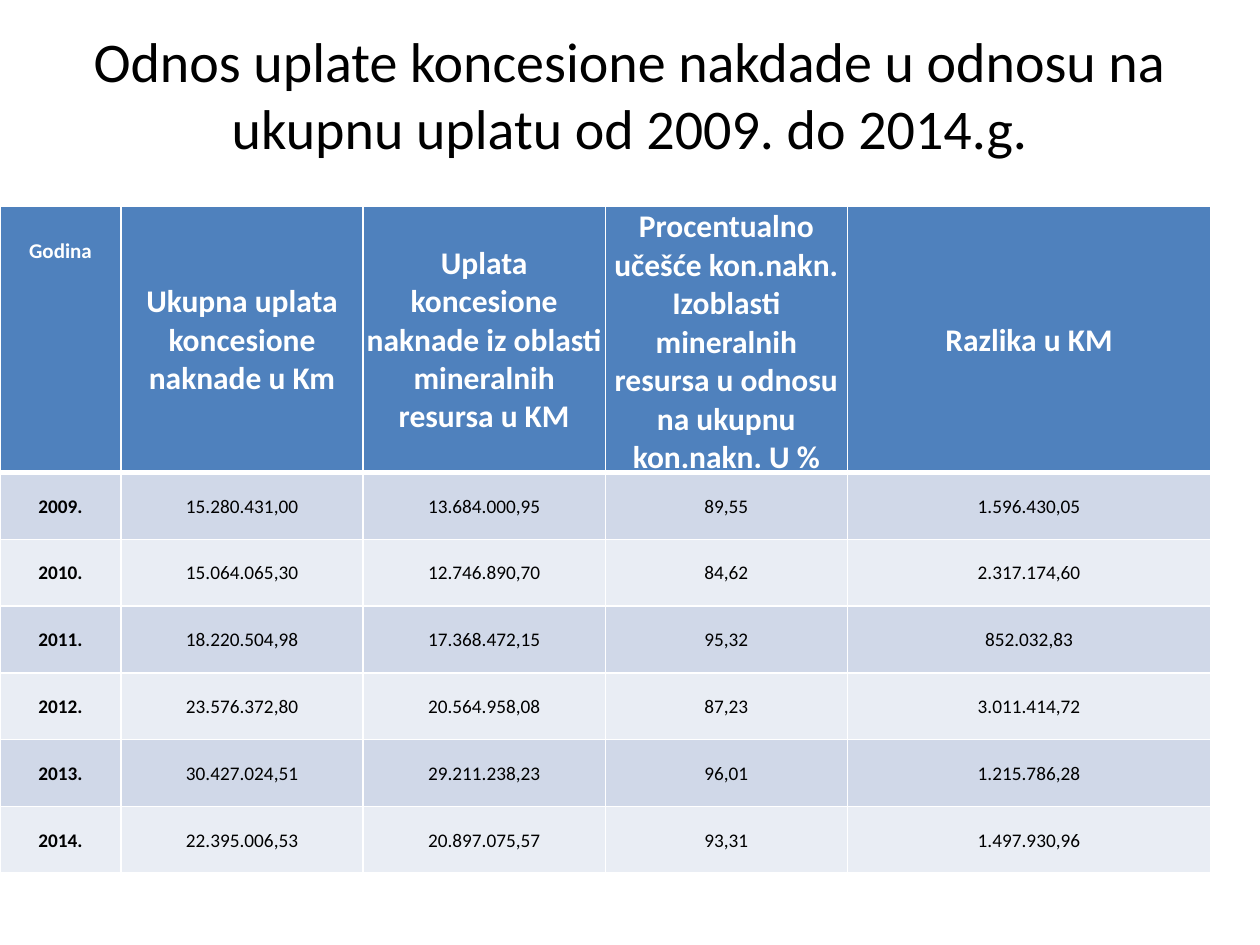
from lxml.etree import SubElement
from pptx import Presentation
from pptx.dml.color import RGBColor
from pptx.enum.text import MSO_ANCHOR, PP_ALIGN
from pptx.oxml.ns import qn
from pptx.util import Inches, Pt

WIDTH, HEIGHT = 10, 7.5
FONT = "Calibri"
WHITE, BLACK, BLUE = "FFFFFF", "000000", "4F81BD"
BANDS = ["D0D8E8", "E9EDF4"]

# Table grid: column shares, row heights in inches
TABLE_LEFT, TABLE_TOP, TABLE_WIDTH = 0, 1.64, 9.61
COLUMN_SHARES = [1, 2, 2, 2, 3]
HEADER_HEIGHT, ROW_HEIGHT = 2.08, 0.53

TITLE = ("Odnos uplate koncesione nakdade u odnosu na "
         "ukupnu uplatu od 2009. do 2014.g.")
HEADERS = [
    "Godina",
    "Ukupna uplata koncesione naknade u Km",
    "Uplata koncesione naknade iz oblasti mineralnih resursa u KM",
    "Procentualno učešće kon.nakn. Izoblasti mineralnih resursa "
    "u odnosu na ukupnu kon.nakn. U %",
    "Razlika u KM",
]
YEARS = [
    ["2009.", "15.280.431,00", "13.684.000,95", "89,55", "1.596.430,05"],
    ["2010.", "15.064.065,30", "12.746.890,70", "84,62", "2.317.174,60"],
    ["2011.", "18.220.504,98", "17.368.472,15", "95,32", "852.032,83"],
    ["2012.", "23.576.372,80", "20.564.958,08", "87,23", "3.011.414,72"],
    ["2013.", "30.427.024,51", "29.211.238,23", "96,01", "1.215.786,28"],
    ["2014.", "22.395.006,53", "20.897.075,57", "93,31", "1.497.930,96"],
]

# Cell formats; margins are left, top, right, bottom in inches
TIGHT = [0.01, 0.01, 0.01, 0]
HEADER_FORMAT = {"size": Pt(18), "bold": True}
CORNER_FORMAT = {"size": Pt(12), "bold": True}
CORNER_MARGINS = [0.1, 0.25, 0.1, 0.05]


def color(hex_value):
    return RGBColor.from_string(hex_value)


def set_attributes(target, values):
    for name, value in values.items():
        setattr(target, name, value)


def write_text(frame, text, text_color, font_format):
    para = frame.paragraphs[0]
    para.alignment = PP_ALIGN.CENTER
    span = para.add_run()
    span.text = text
    set_attributes(span.font, {"name": FONT, **font_format})
    span.font.color.rgb = color(text_color)


def add_title(page):
    box = page.shapes.add_textbox(
        Inches(0.05 * WIDTH), 0, Inches(0.9 * WIDTH), Inches(1.48))
    set_attributes(box.text_frame, {
        "word_wrap": True, "vertical_anchor": MSO_ANCHOR.MIDDLE})
    write_text(box.text_frame, TITLE, BLACK, {"size": Pt(32)})


def set_borders(cell, bottom_width):
    properties = cell._tc.get_or_add_tcPr()
    widths = {"a:lnL": 1, "a:lnR": 1, "a:lnT": 1, "a:lnB": bottom_width}
    for tag, width in widths.items():
        line = SubElement(properties, qn(tag), w=str(Pt(width)))
        fill = SubElement(line, qn("a:solidFill"))
        SubElement(fill, qn("a:srgbClr"), val=WHITE)


def style_cell(cell, fill_color, anchor, margins, bottom_width=1):
    # Borders come before the fill in the cell properties
    set_borders(cell, bottom_width)
    cell.fill.solid()
    cell.fill.fore_color.rgb = color(fill_color)
    cell.vertical_anchor = anchor
    sides = ["margin_left", "margin_top", "margin_right", "margin_bottom"]
    set_attributes(cell, dict(zip(sides, map(Inches, margins))))


def fill_header(table):
    anchors = [MSO_ANCHOR.TOP, MSO_ANCHOR.MIDDLE, MSO_ANCHOR.MIDDLE,
               MSO_ANCHOR.BOTTOM, MSO_ANCHOR.MIDDLE]
    for column, (text, anchor) in enumerate(zip(HEADERS, anchors)):
        cell = table.cell(0, column)
        corner = column == 0
        style_cell(cell, BLUE, anchor,
                   CORNER_MARGINS if corner else TIGHT, bottom_width=3)
        write_text(cell.text_frame, text, WHITE,
                   CORNER_FORMAT if corner else HEADER_FORMAT)


def fill_years(table):
    for row, values in enumerate(YEARS):
        for column, text in enumerate(values):
            cell = table.cell(row + 1, column)
            style_cell(cell, BANDS[row % 2], MSO_ANCHOR.MIDDLE, TIGHT)
            write_text(cell.text_frame, text, BLACK,
                       {"size": Pt(11), "bold": column == 0})


def add_payment_table(page):
    heights = [HEADER_HEIGHT] + [ROW_HEIGHT] * len(YEARS)
    table = page.shapes.add_table(
        len(heights), len(COLUMN_SHARES), Inches(TABLE_LEFT),
        Inches(TABLE_TOP), Inches(TABLE_WIDTH), Inches(sum(heights))).table
    for column, share in zip(table.columns, COLUMN_SHARES):
        column.width = Inches(TABLE_WIDTH * share / sum(COLUMN_SHARES))
    for row, height in zip(table.rows, heights):
        row.height = Inches(height)
    fill_header(table)
    fill_years(table)


def main():
    deck = Presentation()
    set_attributes(deck, {
        "slide_width": Inches(WIDTH), "slide_height": Inches(HEIGHT)})
    page = deck.slides.add_slide(deck.slide_layouts[6])
    add_title(page)
    add_payment_table(page)
    deck.save("out.pptx")


if __name__ == "__main__":
    main()
